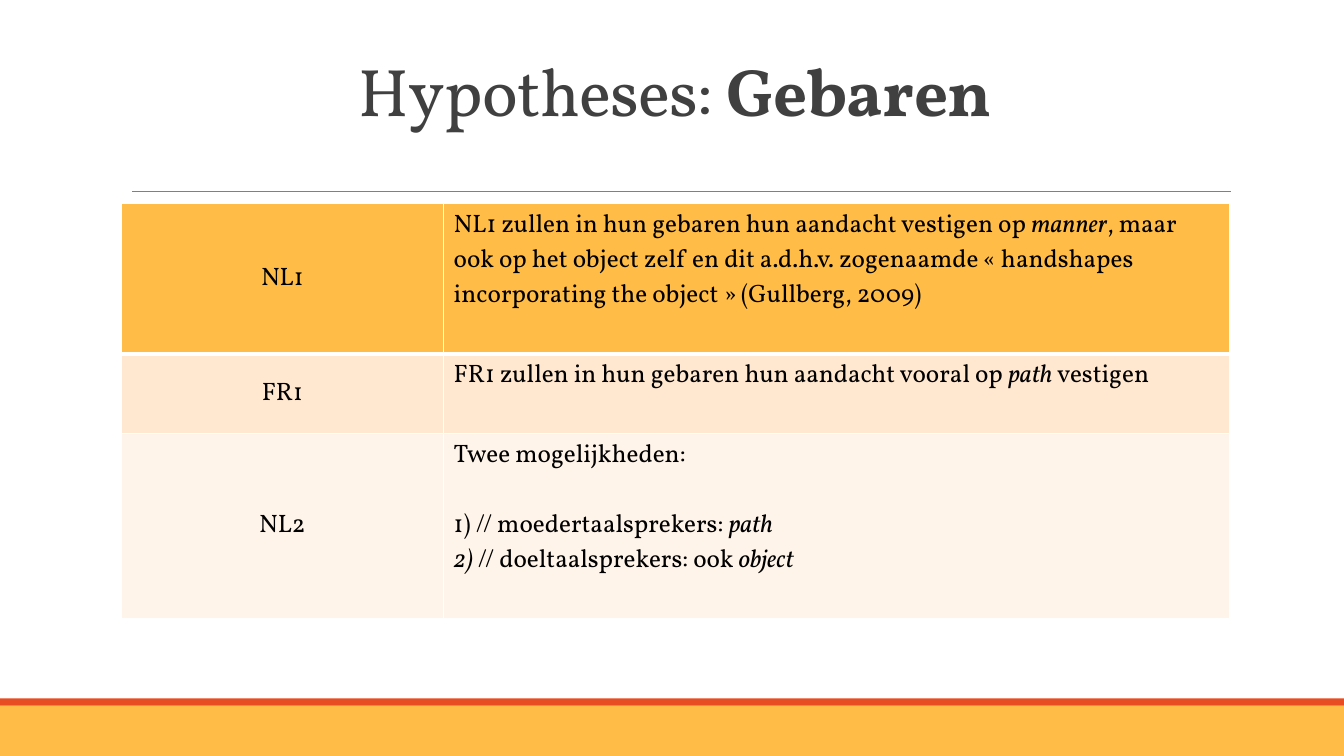
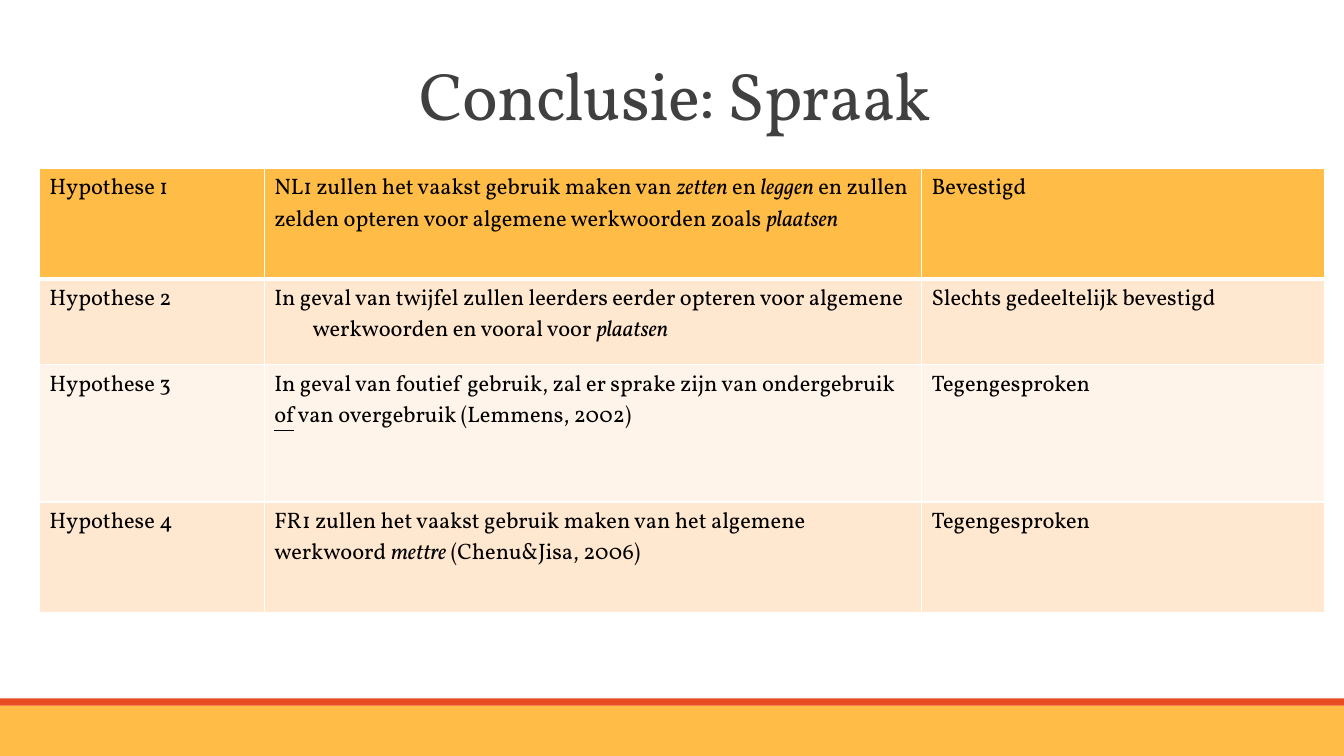
import pptx
import pptx.util
import pptx.dml.color
import pptx.enum.shapes
import pptx.enum.text
import pptx.oxml
import pptx.oxml.ns

Inches, Pt = pptx.util.Inches, pptx.util.Pt
RGBColor = pptx.dml.color.RGBColor
ALIGN = pptx.enum.text.PP_ALIGN
ANCHOR = pptx.enum.text.MSO_ANCHOR
qn = pptx.oxml.ns.qn

# Shared colours and text styles
AMBER = RGBColor(0xFF, 0xBD, 0x47)
RED = RGBColor(0xE8, 0x4C, 0x22)
PEACH = RGBColor(0xFF, 0xE8, 0xCF)
CREAM = RGBColor(0xFF, 0xF4, 0xE9)
GREY = RGBColor(0x80, 0x80, 0x80)
DARK = RGBColor(0x40, 0x40, 0x40)
BLACK = RGBColor(0, 0, 0)
WHITE = RGBColor(0xFF, 0xFF, 0xFF)
FONT = "Vollkorn"
ROW_FILLS = [AMBER, PEACH, CREAM, PEACH]
HANGING = 0.38
TITLE_STYLE = {"name": FONT, "size": Pt(48), "bold": False}

# Slide content: a run is plain text or (text, font attribute),
# a paragraph is a list of runs, a cell is a list of paragraphs
SLIDES = [
    {
        "title": ["Hypotheses: ", ("Gebaren", "bold")],
        "title_at": (1.2, 0.31, 11, 1.03),
        "table_at": (1.2, 2.02),
        "cols": [3.2, 7.8],
        "rows": [1.49, 0.79, 1.84],
        "size": 18,
        "centred_labels": True,
        "hanging": [(1, 1)],
        "cells": [
            [[["NL1"]],
             [["NL1 zullen in hun gebaren hun aandacht vestigen op ", ("manner", "italic"),
               ", maar ook op het object zelf en dit a.d.h.v. zogenaamde « handshapes "
               "incorporating the object » (Gullberg, 2009)"]]],
            [[["FR1"]],
             [["FR1 zullen in hun gebaren hun aandacht vooral op ", ("path ", "italic"),
               "vestigen"]]],
            [[["NL2"]],
             [["Twee mogelijkheden:"],
              ["1) // moedertaalsprekers: ", ("path", "italic")],
              [("2) ", "italic"), "// doeltaalsprekers: ook ", ("object", "italic")]]],
        ],
    },
    {
        "title": ["Conclusie: Spraak"],
        "title_at": (1.2, 0.48, 11, 0.9),
        "table_at": (0.39, 1.67),
        "cols": [2.23, 6.52, 4],
        "rows": [1.1, 0.85, 1.36, 1.1],
        "size": 16,
        "centred_labels": False,
        "hanging": [(1, 1), (1, 2)],
        "cells": [
            [[["Hypothese 1"]],
             [["NL1 zullen het vaakst gebruik maken van ", ("zetten", "italic"), " en ",
               ("leggen", "italic"),
               " en zullen zelden opteren voor algemene werkwoorden zoals ",
               ("plaatsen", "italic")]],
             [["Bevestigd"]]],
            [[["Hypothese 2"]],
             [["In geval van twijfel zullen leerders eerder opteren voor algemene "
               "werkwoorden en vooral voor ", ("plaatsen", "italic")]],
             [["Slechts gedeeltelijk bevestigd"]]],
            [[["Hypothese 3"]],
             [["In geval van foutief gebruik, zal er sprake zijn van ondergebruik ",
               ("of", "underline"), " van overgebruik (Lemmens, 2002)"]],
             [["Tegengesproken"]]],
            [[["Hypothese 4"]],
             [["FR1 zullen het vaakst gebruik maken van het algemene werkwoord ",
               ("mettre", "italic"), " (Chenu&Jisa, 2006)"]],
             [["Tegengesproken"]]],
        ],
    },
]


def add_runs(p, runs, style, color):
    for run in runs:
        text, mark = (run, None) if isinstance(run, str) else run
        r = p.add_run()
        r.text = text
        for key, value in style.items():
            setattr(r.font, key, value)
        r.font.color.rgb = color
        if mark:
            setattr(r.font, mark, True)


def add_border(cell, side, width):
    tcPr = cell._tc.get_or_add_tcPr()
    ln = pptx.oxml.parse_xml(
        f'<a:ln{side} {pptx.oxml.ns.nsdecls("a")} w="{Pt(width)}"><a:solidFill>'
        f'<a:srgbClr val="{WHITE}"/></a:solidFill></a:ln{side}>')
    tcPr.append(ln)


prs = pptx.Presentation()
prs.slide_width, prs.slide_height = Inches(13.33), Inches(7.5)
layout = prs.slide_layouts[5]
for ph in list(layout.placeholders):
    if ph.placeholder_format.type != pptx.enum.shapes.PP_PLACEHOLDER.TITLE:
        ph.element.getparent().remove(ph.element)

slides = [prs.slides.add_slide(layout) for _ in SLIDES]

# Bands and rule, drawn once and moved to the shared layout
shapes = slides[0].shapes
for top, height, color in [(7, 0.5, AMBER), (6.93, 0.07, RED)]:
    band = shapes.add_shape(pptx.enum.shapes.MSO_SHAPE.RECTANGLE,
                            0, Inches(top), prs.slide_width, Inches(height))
    band.shadow.inherit = False
    band.fill.solid()
    band.fill.fore_color.rgb = color
    band.line.fill.background()
    layout.shapes.element.append(band.element)
rule = shapes.add_connector(pptx.enum.shapes.MSO_CONNECTOR.STRAIGHT,
                            Inches(1.31), Inches(1.9), Inches(12.21), Inches(1.9))
rule.line.color.rgb = GREY
rule.line.width = Pt(0.5)
rule.element.spPr.append(pptx.oxml.parse_xml(f'<a:effectLst {pptx.oxml.ns.nsdecls("a")}/>'))
layout.shapes.element.append(rule.element)

for s, content in zip(slides, SLIDES):
    # Title
    sp = s.shapes.title
    sp.left, sp.top, sp.width, sp.height = map(Inches, content["title_at"])
    tf = sp.text_frame
    tf.auto_size = pptx.enum.text.MSO_AUTO_SIZE.NONE
    tf.vertical_anchor = ANCHOR.BOTTOM
    p = tf.paragraphs[0]
    p.alignment = ALIGN.CENTER
    p.line_spacing = 0.85
    add_runs(p, content["title"], TITLE_STYLE, DARK)
    for rPr in sp.element.iter(qn("a:rPr")):
        rPr.set("spc", "-50")

    # Table grid
    cols, rows = content["cols"], content["rows"]
    left, top = content["table_at"]
    table = s.shapes.add_table(len(rows), len(cols), Inches(left), Inches(top),
                               Inches(sum(cols)), Inches(sum(rows))).table
    table.first_row = table.horz_banding = False
    for column, width in zip(table.columns, cols):
        column.width = Inches(width)
    for row, height in zip(table.rows, rows):
        row.height = Inches(height)

    # Table cells
    style = {"name": FONT, "size": Pt(content["size"])}
    for i, row in enumerate(content["cells"]):
        for j, paragraphs in enumerate(row):
            cell = table.cell(i, j)
            for side in "LRTB":
                add_border(cell, side, 3 if i == 0 and side == "B" else 1)
            cell.fill.solid()
            cell.fill.fore_color.rgb = ROW_FILLS[i]
            centred = content["centred_labels"] and j == 0
            cell.vertical_anchor = ANCHOR.MIDDLE if centred else ANCHOR.TOP
            tf = cell.text_frame
            for k, runs in enumerate(paragraphs):
                p = tf.add_paragraph() if k else tf.paragraphs[0]
                p.alignment = ALIGN.CENTER if centred else ALIGN.LEFT
                if k == 1:
                    p.space_before = Pt(25)
                if (i, j) in content["hanging"]:
                    pPr = p._p.get_or_add_pPr()
                    pPr.set("marL", str(Inches(HANGING)))
                    pPr.set("indent", str(-Inches(HANGING)))
                add_runs(p, runs, style, BLACK)

prs.save("out.pptx")
